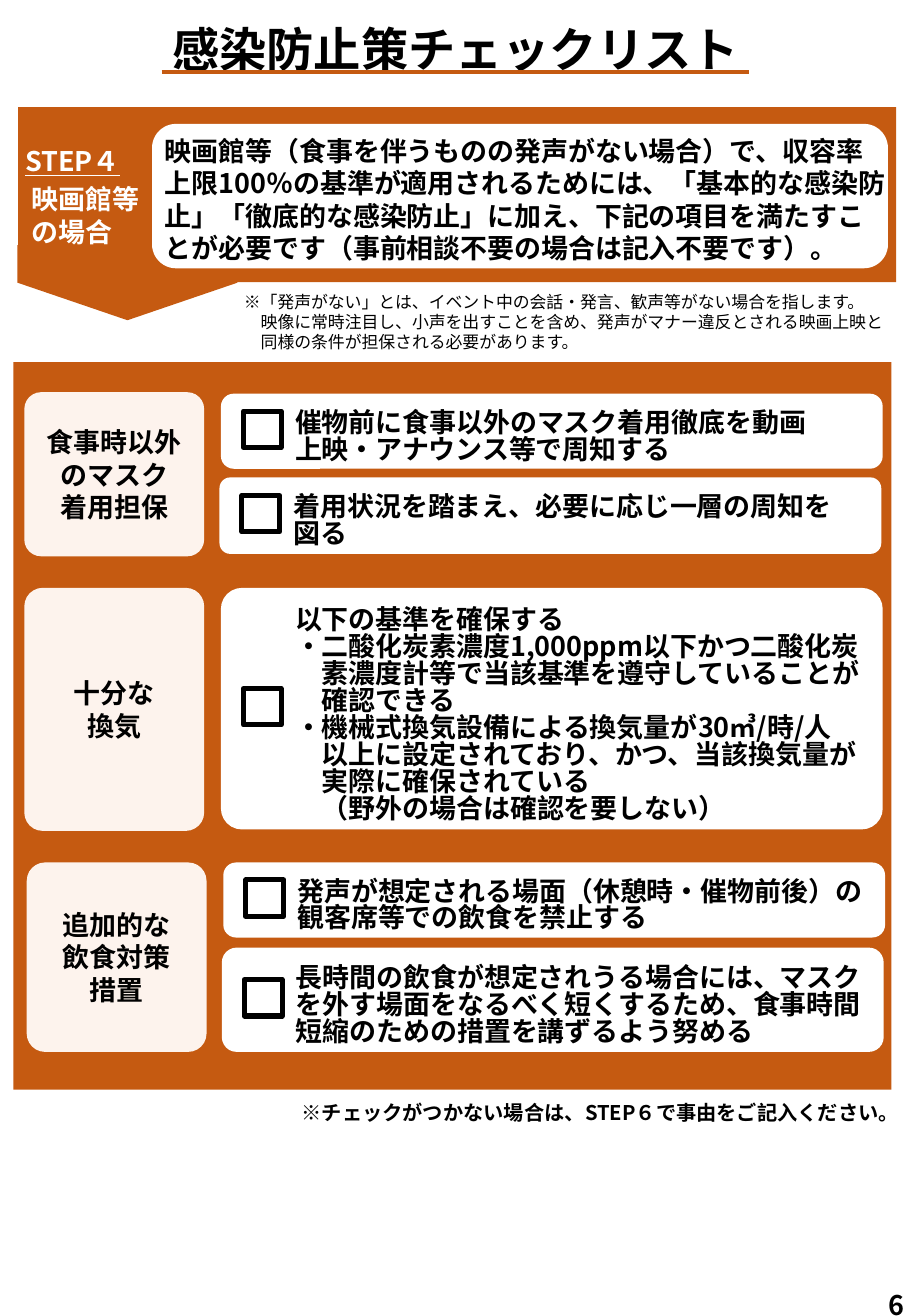
"""Build the infection prevention checklist page for cinemas (STEP 4)."""
from pptx import Presentation
from pptx.dml.color import RGBColor
from pptx.enum.shapes import MSO_CONNECTOR, MSO_SHAPE
from pptx.enum.text import MSO_ANCHOR, MSO_AUTO_SIZE, PP_ALIGN
from pptx.oxml.ns import qn
from pptx.util import Cm, Pt
from lxml import etree

RECTANGLE = MSO_SHAPE.RECTANGLE
ROUNDED = MSO_SHAPE.ROUNDED_RECTANGLE
PENTAGON = MSO_SHAPE.PENTAGON
STRAIGHT = MSO_CONNECTOR.STRAIGHT
LEFT, CENTER, RIGHT = PP_ALIGN.LEFT, PP_ALIGN.CENTER, PP_ALIGN.RIGHT
TOP, MIDDLE = MSO_ANCHOR.TOP, MSO_ANCHOR.MIDDLE
NO_AUTOFIT = MSO_AUTO_SIZE.NONE

FONT = "Noto Sans CJK JP"
ORANGE, CREAM, WHITE, BLACK = "C55A11", "FDF3ED", "FFFFFF", "000000"

TITLE = "感染防止策チェックリスト"
STEP = ["STEP４", "映画館等", "の場合"]
CONDITION = ["映画館等（食事を伴うものの発声がない場合）で、収容率上限100％の基準が適用されるためには、"
             "「基本的な感染防止」「徹底的な感染防止」に加え、下記の項目を満たすことが必要です"
             "（事前相談不要の場合は記入不要です）。"]
NOTE = ["※「発声がない」とは、イベント中の会話・発言、歓声等がない場合を指します。\n"
        "映像に常時注目し、小声を出すことを含め、発声がマナー違反とされる映画上映と\n"
        "同様の条件が担保される必要があります。"]
FOOTNOTE = ["※チェックがつかない場合は、STEP６で事由をご記入ください。"]
PAGE_NUMBER = ["6"]

# Each section: label lines, left, top, height, cards (top, height, corner, lines)
SECTIONS = [
    (["食事時以外のマスク", "着用担保"], 0.51, 8.2, 3.43, [
        (8.23, 1.57, 0.171, ["催物前に食事以外のマスク着用徹底を動画",
                             "上映・アナウンス等で周知する"]),
        (9.98, 1.6, 0.142, ["着用状況を踏まえ、必要に応じ一層の周知を", "図る"]),
    ]),
    (["十分な", "換気"], 0.51, 12.29, 5.08, [
        (12.29, 5.05, 0.087, [
            "以下の基準を確保する",
            "・二酸化炭素濃度1,000ppm以下かつ二酸化炭\n"
            "素濃度計等で当該基準を遵守していることが\n確認できる",
            "・機械式換気設備による換気量が30㎥/時/人\n"
            "以上に設定されており、かつ、当該換気量が\n"
            "実際に確保されている\n（野外の場合は確認を要しない）"]),
    ]),
    (["追加的な", "飲食対策", "措置"], 0.56, 18.03, 3.96, [
        (18.03, 1.57, 0.171, ["発声が想定される場面（休憩時・催物前後）の",
                              "観客席等での飲食を禁止する"]),
        (19.81, 2.18, 0.142, ["長時間の飲食が想定されうる場合には、マスク",
                              "を外す場面をなるべく短くするため、食事時間",
                              "短縮のための措置を講ずるよう努める"]),
    ]),
]
LABEL_WIDTH, CARD_OFFSET, CARD_STAGGER, CARD_WIDTH = 3.76, 4.11, 0.03, 13.84
CHECK_OFFSET, CHECK_WIDTH, CHECK_HEIGHT, CHECK_RISE = 0.47, 0.79, 0.76, 0.04
TEXT_OFFSET, TEXT_WIDTH, TEXT_DROP = 1.3, 13.06, 0.13
LINE_HEIGHT, TEXT_PADDING = 0.56, 0.25


def color(value):
    return RGBColor.from_string(value)


def write(frame, lines, size=16, bold=True, ink=BLACK, align=LEFT, spacing=None):
    frame.word_wrap = True
    frame.auto_size = NO_AUTOFIT
    for index, line in enumerate(lines):
        paragraph = frame.add_paragraph() if index else frame.paragraphs[0]
        paragraph.text = line
        paragraph.alignment = align
        paragraph.line_spacing = spacing
        font = paragraph.font
        font.size, font.bold, font.name = Pt(size), bold, FONT
        font.color.rgb = color(ink)
        etree.SubElement(font._element, qn("a:ea"), typeface=FONT)
        if "\n" in line:
            indent(paragraph, Pt(size), -Pt(size))


def indent(paragraph, margin, first_line=0):
    properties = paragraph._p.get_or_add_pPr()
    properties.set("marL", str(int(margin)))
    properties.set("indent", str(int(first_line)))


def add_box(slide, kind, left, top, width, height, fill=None, corner=None):
    shape = slide.shapes.add_shape(kind, Cm(left), Cm(top), Cm(width), Cm(height))
    shape.shadow.inherit = False
    if corner is not None:
        shape.adjustments[0] = corner
    if fill:
        shape.fill.solid()
        shape.fill.fore_color.rgb = color(fill)
        shape.line.fill.background()
    else:
        shape.fill.background()
        shape.line.color.rgb = color(BLACK)
        shape.line.width = Pt(3)
    return shape


def add_text(slide, left, top, width, height, lines, **style):
    frame = slide.shapes.add_textbox(Cm(left), Cm(top), Cm(width), Cm(height)).text_frame
    write(frame, lines, **style)
    return frame


def add_title(slide):
    title = slide.shapes.title
    title.left, title.top, title.width, title.height = Cm(1.22), Cm(0.3), Cm(16.61), Cm(1.45)
    title.text_frame.vertical_anchor = TOP
    write(title.text_frame, [TITLE], size=28, align=CENTER)
    underline = slide.shapes.add_connector(STRAIGHT, Cm(3.38), Cm(1.5), Cm(15.67), Cm(1.5))
    underline.line.color.rgb = color(ORANGE)
    underline.line.width = Pt(2.25)
    etree.SubElement(underline._element.spPr, qn("a:effectLst"))


def add_step_banner(slide):
    add_box(slide, PENTAGON, 1.88, 3.61, 1.57, 4.6, ORANGE).rotation = 90
    add_box(slide, RECTANGLE, 0.38, 2.24, 18.36, 3.66, ORANGE)
    add_box(slide, ROUNDED, 3.18, 2.59, 15.39, 3.02, WHITE)
    heading, *names = add_text(slide, 0.28, 2.9, 3.02, 2.44, STEP, ink=WHITE).paragraphs
    heading.font.underline = True
    heading.space_after = Pt(3.5)
    for name in names:
        indent(name, Cm(0.13))
    add_text(slide, 3.2, 2.69, 15.6, 3, CONDITION)


def add_card(slide, left, top, height, corner, lines):
    add_box(slide, ROUNDED, left, top, CARD_WIDTH, height, WHITE, corner)
    middle = top + height / 2
    add_box(slide, RECTANGLE, left + CHECK_OFFSET, middle - CHECK_HEIGHT / 2 - CHECK_RISE,
            CHECK_WIDTH, CHECK_HEIGHT)
    line_count = sum(line.count("\n") + 1 for line in lines)
    text_height = line_count * LINE_HEIGHT + TEXT_PADDING
    add_text(slide, left + TEXT_OFFSET, middle - text_height / 2 + TEXT_DROP,
             TEXT_WIDTH, text_height, lines, spacing=Pt(16))


def add_section(slide, label, left, top, height, cards):
    frame = add_box(slide, ROUNDED, left, top, LABEL_WIDTH, height, CREAM, 0.102).text_frame
    frame.margin_left = frame.margin_right = Cm(0.18)
    frame.margin_top = frame.margin_bottom = Cm(0.1)
    frame.vertical_anchor = MIDDLE
    write(frame, label, align=CENTER)
    for index, card in enumerate(cards):
        add_card(slide, left + CARD_OFFSET - index * CARD_STAGGER, *card)


def main():
    presentation = Presentation()
    presentation.slide_width, presentation.slide_height = Cm(19.05), Cm(27.51)
    slide = presentation.slides.add_slide(presentation.slide_layouts[5])
    add_title(slide)
    add_step_banner(slide)
    add_text(slide, 4.85, 5.97, 14.05, 1.55, NOTE, size=10, bold=False)
    add_box(slide, RECTANGLE, 0.28, 7.57, 18.36, 15.21, ORANGE)
    for section in SECTIONS:
        add_section(slide, *section)
    add_text(slide, 5.36, 22.81, 13.69, 0.84, FOOTNOTE, size=12, align=RIGHT, spacing=Pt(16))
    add_text(slide, 18.34, 26.82, 0.71, 0.69, PAGE_NUMBER)
    presentation.save("out.pptx")


if __name__ == "__main__":
    main()
